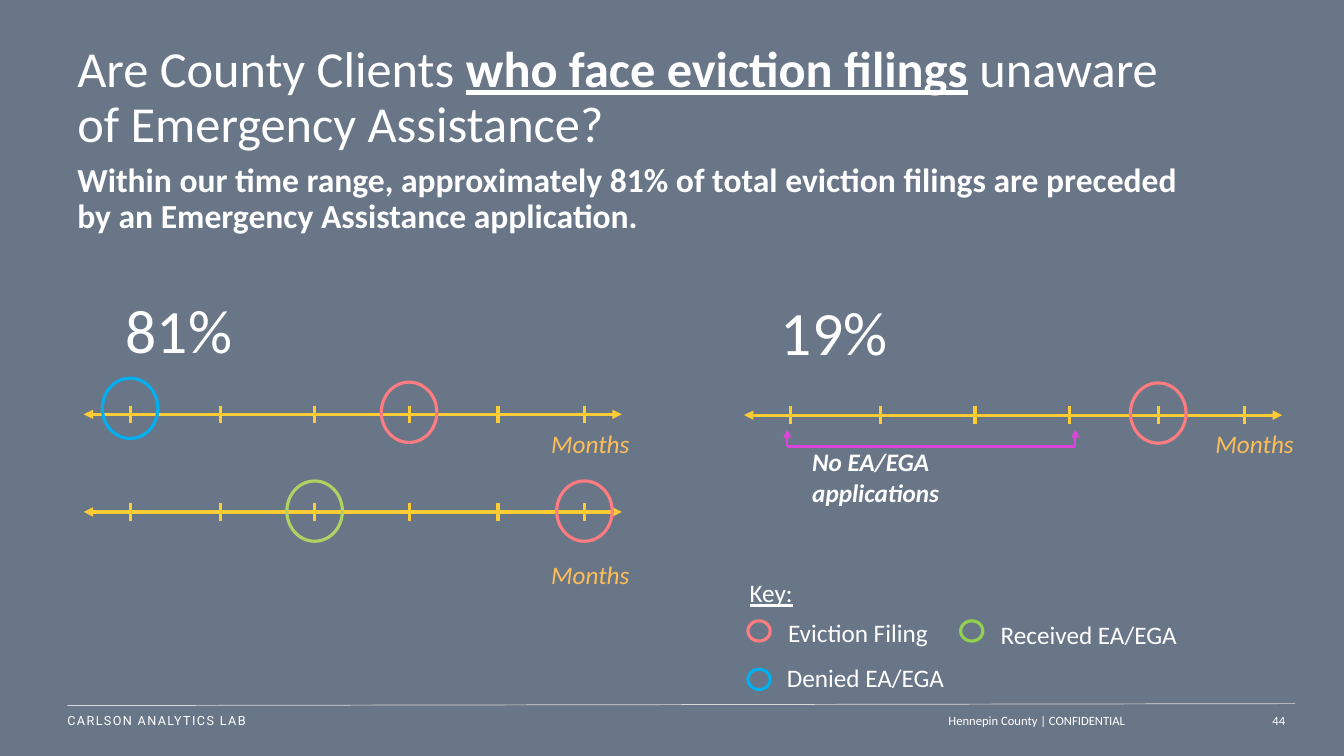
from lxml.etree import SubElement
from pptx import Presentation
from pptx.dml.color import RGBColor
from pptx.enum.shapes import MSO_CONNECTOR, MSO_SHAPE
from pptx.enum.text import MSO_ANCHOR, PP_ALIGN
from pptx.oxml.ns import qn
from pptx.util import Cm, Pt

SLATE = RGBColor(0x69, 0x76, 0x88)
WHITE = RGBColor(0xFF, 0xFF, 0xFF)
GREY = RGBColor(0xD9, 0xD9, 0xD9)
GOLD = RGBColor(0xFF, 0xCC, 0x33)
AMBER = RGBColor(0xFD, 0xBE, 0x57)
MAGENTA = RGBColor(0xDC, 0x44, 0xDC)
FILING_RED = RGBColor(0xFF, 0x7C, 0x80)
DENIED_BLUE = RGBColor(0x00, 0xB0, 0xF0)
RECEIVED_GREEN = RGBColor(0xAF, 0xD3, 0x62)
KEY_GREEN = RGBColor(0x92, 0xD0, 0x50)

# Timeline geometry in centimetres; ticks are measured from the left end
AXIS_LENGTH = 13.56
TICKS = (1.17, 3.45, 5.82, 8.2, 10.44, 12.62)
TICK_HALF = 0.22


def add_text(slide, left, top, width, height, text, size=18, color=WHITE,
             bold=False, italic=False, underline=False, font="Calibri",
             align=PP_ALIGN.LEFT, anchor=MSO_ANCHOR.TOP, inset=0.25):
    """Add a wrapped text box; return its paragraph and its first run."""
    box = slide.shapes.add_textbox(Cm(left), Cm(top), Cm(width), Cm(height))
    frame = box.text_frame
    frame.word_wrap = True
    frame.vertical_anchor = anchor
    frame.margin_left = Cm(inset)
    paragraph = frame.paragraphs[0]
    paragraph.alignment = align
    run = add_run(paragraph, text, size, color, bold, underline, font)
    run.font.italic = italic
    return paragraph, run


def add_run(paragraph, text, size, color=WHITE, bold=False, underline=False,
            font="Calibri"):
    run = paragraph.add_run()
    run.text = text
    run.font.name = font
    run.font.size = Pt(size)
    run.font.color.rgb = color
    run.font.bold = bold
    run.font.underline = underline
    return run


def add_line(shapes, x1, y1, x2, y2, color, width, arrows=()):
    """Add a straight line; arrows may hold headEnd and tailEnd."""
    connector = shapes.add_connector(
        MSO_CONNECTOR.STRAIGHT, Cm(x1), Cm(y1), Cm(x2), Cm(y2))
    connector.line.color.rgb = color
    connector.line.width = Pt(width)
    properties = connector._element.spPr
    outline = properties.find(qn("a:ln"))
    for end in arrows:
        SubElement(outline, qn(f"a:{end}"), type="triangle")
    SubElement(properties, qn("a:effectLst"))


def add_ring(slide, center_x, center_y, width, height, color):
    ring = slide.shapes.add_shape(
        MSO_SHAPE.OVAL, Cm(center_x - width / 2), Cm(center_y - height / 2),
        Cm(width), Cm(height))
    ring.shadow.inherit = False
    ring.fill.background()
    ring.line.color.rgb = color
    ring.line.width = Pt(2.25)


def add_timeline(slide, left, y, events):
    """Add an axis with ticks, and a ring for each (tick, rise, color)."""
    shapes = slide.shapes.add_group_shape().shapes
    add_line(shapes, left, y, left + AXIS_LENGTH, y, GOLD, 2.25,
             ("headEnd", "tailEnd"))
    for tick in TICKS:
        add_line(shapes, left + tick, y - TICK_HALF, left + tick,
                 y + TICK_HALF, GOLD, 2.25)
    for tick, rise, color in events:
        add_ring(slide, left + TICKS[tick], y - rise, 1.4, 1.52, color)


def add_bracket(slide, left, right, top, bottom):
    shapes = slide.shapes.add_group_shape().shapes
    for x in (left, right):
        add_line(shapes, x, bottom, x, top, MAGENTA, 1.5, ("tailEnd",))
    add_line(shapes, left, bottom, right, bottom, MAGENTA, 1.5)


def add_key(slide):
    add_text(slide, 18.64, 14.43, 4.06, 1.02, "Key:", underline=True)
    for ring_x, ring_y, color, left, top, label in (
            (19.13, 15.9, FILING_RED, 19.61, 15.44, "Eviction Filing"),
            (19.13, 17.12, DENIED_BLUE, 19.58, 16.56, "Denied EA/EGA"),
            (24.49, 15.9, KEY_GREEN, 24.97, 15.47, "Received EA/EGA")):
        add_ring(slide, ring_x, ring_y, 0.56, 0.51, color)
        add_text(slide, left, top, 5.3, 1.02, label)


def add_footer(slide):
    add_line(slide.shapes, 1.7, 17.78, 32.64, 17.73, GREY, 0.5)
    _, lab = add_text(slide, 1.7, 17.73, 8.23, 0.84, "CARLSON ANALYTICS LAB",
                      size=9, font="Roboto", anchor=MSO_ANCHOR.MIDDLE, inset=0)
    lab.font._element.set("spc", "100")
    for left, width, text in (
            (13.51, 15.09, "Hennepin County | CONFIDENTIAL"),
            (31.5, 1.14, "44")):
        add_text(slide, left, 17.74, width, 0.81, text, size=9,
                 align=PP_ALIGN.RIGHT, anchor=MSO_ANCHOR.MIDDLE, inset=0)


def add_headings(slide):
    title, _ = add_text(slide, 1.7, 1.09, 28.45, 2.79, "Are County Clients ",
                        size=36, anchor=MSO_ANCHOR.MIDDLE)
    add_run(title, "who face eviction filings", 36, bold=True, underline=True)
    add_run(title, " unaware of Emergency Assistance?", 36)
    title.line_spacing = 0.9
    finding, _ = add_text(
        slide, 1.7, 3.99, 28.45, 2.4,
        "Within our time range, approximately 81% of total eviction filings "
        "are preceded by an Emergency Assistance application.",
        size=24, bold=True)
    finding.line_spacing = 0.9


def main():
    presentation = Presentation()
    presentation.slide_width = Cm(33.87)
    presentation.slide_height = Cm(19.05)
    slide = presentation.slides.add_slide(presentation.slide_layouts[6])
    slide.background.fill.solid()
    slide.background.fill.fore_color.rgb = SLATE

    add_headings(slide)

    # Shares of filings
    add_text(slide, 2.92, 7.24, 3.53, 2.13, "81%", size=44)
    add_text(slide, 19.43, 7.29, 3.53, 2.13, "19%", size=44)

    # Timelines with their events
    add_timeline(slide, 2.11, 10.44,
                 ((0, 0.15, DENIED_BLUE), (3, 0.05, FILING_RED)))
    add_timeline(slide, 2.11, 12.9,
                 ((2, 0.02, RECEIVED_GREEN), (5, 0.02, FILING_RED)))
    add_timeline(slide, 18.75, 10.46, ((4, 0.05, FILING_RED),))
    for left, top in ((13.64, 10.67), (13.64, 13.97), (30.38, 10.67)):
        add_text(slide, left, top, 2.74, 1.02, "Months", color=AMBER,
                 italic=True)

    # Span without applications
    add_bracket(slide, 19.84, 27.1, 10.82, 11.25)
    add_text(slide, 20.22, 11.13, 4.67, 1.8, "No EA/EGA applications",
             bold=True, italic=True)

    add_key(slide)
    add_footer(slide)
    presentation.save("out.pptx")


if __name__ == "__main__":
    main()
